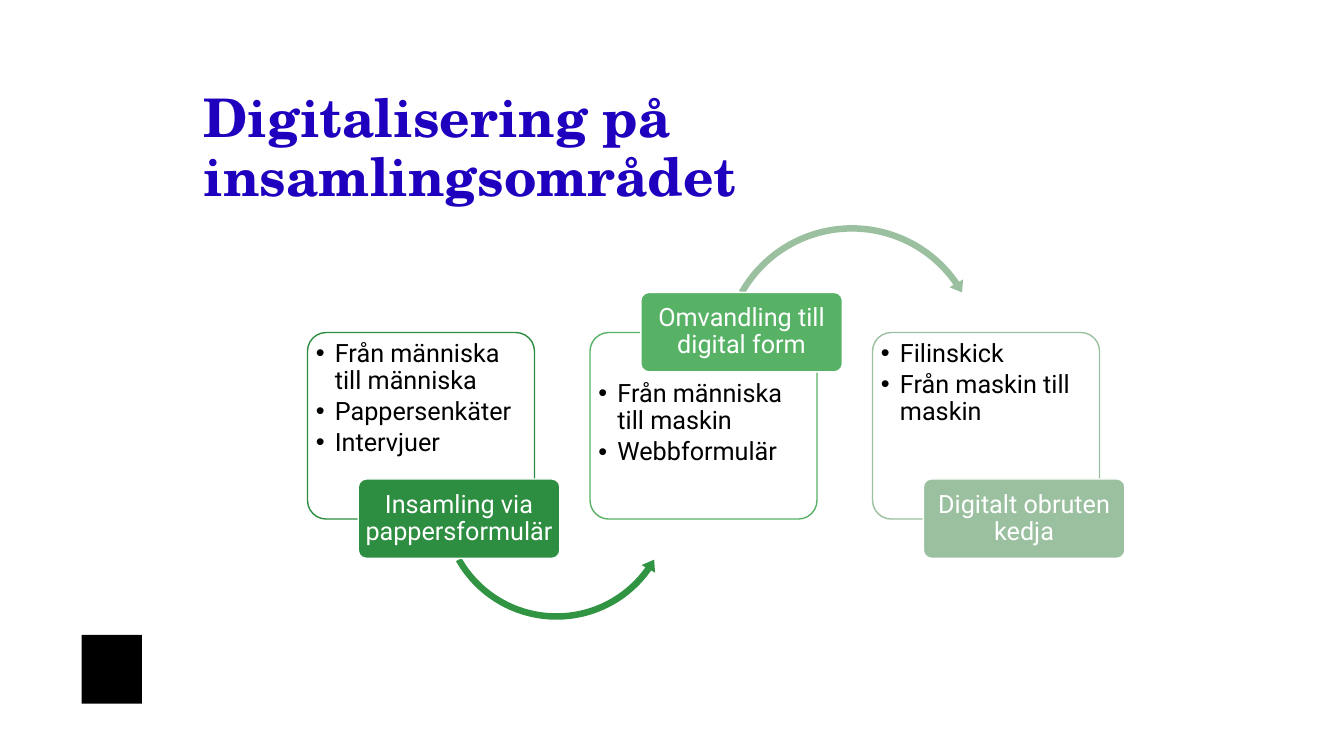
from dataclasses import dataclass

from lxml.etree import SubElement
from pptx import Presentation
from pptx.dml.color import RGBColor
from pptx.enum.shapes import MSO_SHAPE as Shape
from pptx.enum.text import MSO_ANCHOR as Anchor, MSO_AUTO_SIZE as AutoSize, PP_ALIGN as Align
from pptx.oxml.ns import qn
from pptx.util import Cm, Pt


@dataclass(frozen=True)
class Theme:
    title_font: str = "TeX Gyre Schola"
    body_font: str = "Roboto"
    title_size: int = 38
    body_size: int = 18
    title: str = "1E00BE"
    text: str = "000000"
    white: str = "FFFFFF"
    dark_green: str = "2D8D40"
    mid_green: str = "58B266"
    pale_green: str = "9BC0A0"
    dark_arrow: str = "309443"
    pale_arrow: str = "9BC09F"


def write(paragraph, text, *, font, size, color, bold=False, align=Align.LEFT,
          line=0.9, after=0):
    """Fill one paragraph with formatted text."""
    run = paragraph.add_run()
    run.text = text
    run.font.name, run.font.size, run.font.bold = font, Pt(size), bold
    run.font.color.rgb = RGBColor.from_string(color)
    paragraph.alignment, paragraph.line_spacing = align, line
    paragraph.space_before, paragraph.space_after = Pt(0), Pt(after)


def set_frame(frame, anchor, inset_x=0.0, inset_y=0.0):
    frame.word_wrap, frame.auto_size = True, AutoSize.NONE
    frame.vertical_anchor = anchor
    frame.margin_left = frame.margin_right = Cm(inset_x)
    frame.margin_top = frame.margin_bottom = Cm(inset_y)


def place(shape, left, top, width, height):
    shape.left, shape.top = Cm(left), Cm(top)
    shape.width, shape.height = Cm(width), Cm(height)


class SlideBuilder:
    def __init__(self, slide, theme):
        self.slide, self.theme = slide, theme
        self.free_bodies = [p for p in slide.placeholders
                            if p.placeholder_format.idx > 0]

    def title(self, text, *box):
        heading, theme = self.slide.shapes.title, self.theme
        place(heading, *box)
        set_frame(heading.text_frame, Anchor.TOP)
        write(heading.text_frame.paragraphs[0], text, font=theme.title_font,
              size=theme.title_size, color=theme.title, bold=True, line=Pt(42))

    def shape(self, kind, box, fill, line=None, adjustments=()):
        shape = self.slide.shapes.add_shape(kind, *map(Cm, box))
        shape.shadow.inherit = False
        shape.fill.solid()
        shape.fill.fore_color.rgb = RGBColor.from_string(fill)
        if line:
            shape.line.color.rgb = RGBColor.from_string(line)
            shape.line.width = Pt(1)
        else:
            shape.line.fill.background()
        for i, value in enumerate(adjustments):
            shape.adjustments[i] = value
        return shape

    def panel(self, box, color):
        panel = self.shape(Shape.ROUNDED_RECTANGLE, box, self.theme.white, color, [0.1])
        fill_color = panel.element.spPr.find(qn("a:solidFill"))[0]
        SubElement(fill_color, qn("a:alpha"), val="90000")

    def bullets(self, items, *box):
        body, theme = self.free_bodies.pop(0), self.theme
        place(body, *box)
        # Bring the list in front of its panel
        body.element.getparent().append(body.element)
        frame = body.text_frame
        set_frame(frame, Anchor.TOP, 0.1, 0.1)
        for i, item in enumerate(items):
            paragraph = frame.add_paragraph() if i else frame.paragraphs[0]
            write(paragraph, item, font=theme.body_font, size=theme.body_size,
                  color=theme.text, after=2.7)
            properties = paragraph._p.get_or_add_pPr()
            properties.set("marL", str(Cm(0.48)))
            properties.set("indent", str(-Cm(0.48)))
            SubElement(properties, qn("a:buFont"), typeface="Arial")
            SubElement(properties, qn("a:buChar"), char="•")

    def label(self, text, box, color):
        label = self.shape(Shape.ROUNDED_RECTANGLE, box, color, self.theme.white, [0.1])
        set_frame(label.text_frame, Anchor.MIDDLE, 0.1, 0.08)
        write(label.text_frame.paragraphs[0], text, font=self.theme.body_font,
              size=self.theme.body_size, color=self.theme.white, align=Align.CENTER)

    def drop_unused(self):
        for body in self.free_bodies:
            body.element.getparent().remove(body.element)


def main():
    theme = Theme()
    deck = Presentation()
    deck.slide_width, deck.slide_height = Cm(33.87), Cm(19.05)
    page = SlideBuilder(deck.slides.add_slide(deck.slide_layouts[4]), theme)

    # Plain block in the logo's place, then the heading
    page.shape(Shape.RECTANGLE, (2.06, 16, 1.52, 1.73), theme.text)
    page.title("Digitalisering på insamlingsområdet", 5.13, 2.26, 23.65, 3.68)

    # Stages: label, bullets, colour, label on top?, arrow to the next stage
    to_digital = (Shape.LEFT_CIRCULAR_ARROW, (11, 9.68, 6.05, 6.05), theme.dark_arrow,
                  None, (0.027, 3.34, 21.095, 90.245, 0.032))
    to_chain = (Shape.CIRCULAR_ARROW, (18.08, 5.56, 6.78, 6.78), theme.pale_arrow,
                None, (0.024, 2.96, 195.285, 125.755, 0.029))
    stages = [
        ("Insamling via pappersformulär",
         ["Från människa till människa", "Pappersenkäter", "Intervjuer"],
         theme.dark_green, False, to_digital),
        ("Omvandling till digital form",
         ["Från människa till maskin", "Webbformulär"],
         theme.mid_green, True, to_chain),
        ("Digitalt obruten kedja",
         ["Filinskick", "Från maskin till maskin"],
         theme.pale_green, False, None),
    ]
    for i, (name, items, color, label_on_top, arrow) in enumerate(stages):
        left = 7.75 + 7.12 * i
        page.panel((left, 8.38, 5.72, 4.7), color)
        page.bullets(items, left + 0.11, 9.5 if label_on_top else 8.48, 5.49, 3.48)
        if arrow:
            page.shape(*arrow)
        page.label(name, (left + 1.28, 7.37 if label_on_top else 12.07, 5.08, 2), color)

    page.drop_unused()
    deck.save("out.pptx")


if __name__ == "__main__":
    main()
